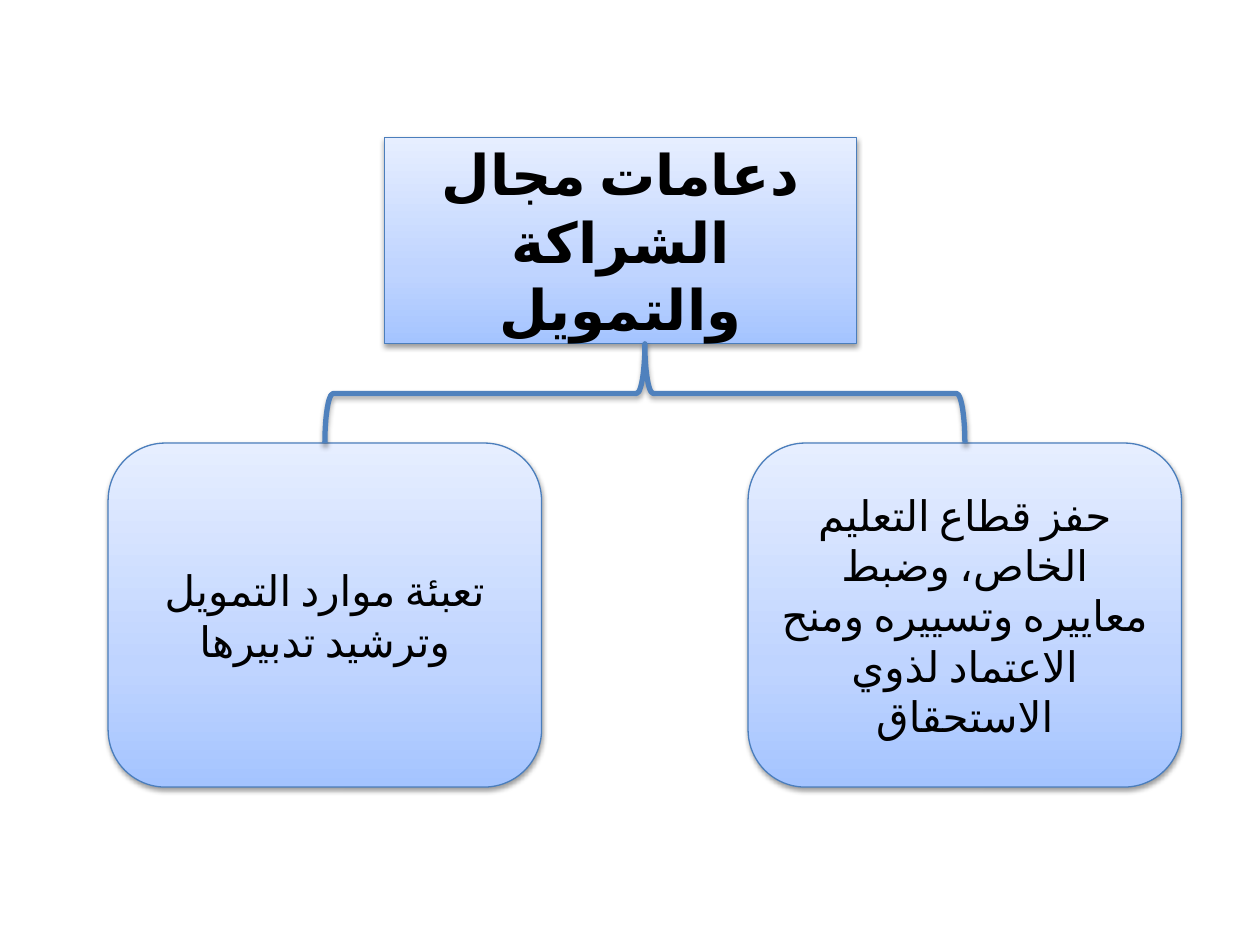
from copy import deepcopy
from dataclasses import dataclass

from lxml.etree import SubElement
from pptx import Presentation
from pptx.dml.color import RGBColor
from pptx.enum.lang import MSO_LANGUAGE_ID
from pptx.enum.shapes import MSO_SHAPE
from pptx.enum.text import MSO_ANCHOR, MSO_AUTO_SIZE, PP_ALIGN
from pptx.oxml.ns import qn
from pptx.util import Pt

HEADING = "دعامات مجال الشراكة والتمويل"
PILLARS = [
    "حفز قطاع التعليم الخاص، وضبط معاييره وتسييره ومنح الاعتماد لذوي الاستحقاق",
    "تعبئة موارد التمويل وترشيد تدبيرها",
]


@dataclass(frozen=True)
class Theme:
    font: str = "Calibri"
    text: str = "000000"
    outline: str = "4B7EBC"
    brace: str = "4F81BD"
    shadow: str = "000000"
    gradient: tuple = ((0, "A4C4FF"), (0.35, "BFD4FF"), (1, "E6EEFF"))
    heading_size: int = 32
    pillar_size: int = 24
    outline_width: float = 0.75
    brace_width: float = 3


THEME = Theme()
HEADING_LEFT, HEADING_TOP, HEADING_WIDTH, HEADING_HEIGHT = 219.6, 78.5, 270, 118
CARD_TOP, CARD_WIDTH, CARD_HEIGHT = 253.2, 247.7, 196.6
FIRST_CARD_LEFT, CARD_STEP = 427.5, -365.7


def add_shadow(shape, opacity, distance):
    shape.shadow.inherit = False
    effects = shape._element.spPr.find(qn("a:effectLst"))
    shadow = SubElement(effects, qn("a:outerShdw"), blurRad=str(Pt(3.1)),
                        dist=str(Pt(distance)), dir="5400000", rotWithShape="0")
    color = SubElement(shadow, qn("a:srgbClr"), val=THEME.shadow)
    SubElement(color, qn("a:alpha"), val=str(opacity * 1000))


def set_outline(shape, color, width):
    shape.line.color.rgb = RGBColor.from_string(color)
    shape.line.width = Pt(width)


def style_box(shape):
    shape.fill.gradient()
    shape.fill.gradient_angle = 90
    stop_list = shape._element.spPr.find(qn("a:gradFill")).find(qn("a:gsLst"))
    stop_list.append(deepcopy(stop_list[-1]))
    for stop, (position, color) in zip(shape.fill.gradient_stops, THEME.gradient):
        stop.position = position
        stop.color.rgb = RGBColor.from_string(color)
    set_outline(shape, THEME.outline, THEME.outline_width)
    add_shadow(shape, 38, 1.6)


def write_text(shape, text, size, bold=False):
    frame = shape.text_frame
    frame.word_wrap = True
    frame.auto_size = MSO_AUTO_SIZE.NONE
    frame.vertical_anchor = MSO_ANCHOR.MIDDLE
    para = frame.paragraphs[0]
    para.alignment = PP_ALIGN.CENTER
    para._p.get_or_add_pPr().set("rtl", "1")
    span = para.add_run()
    span.text = text
    span.font.name = THEME.font
    span.font.size = Pt(size)
    span.font.bold = bold
    span.font.language_id = MSO_LANGUAGE_ID.ARABIC_MOROCCO
    span.font.color.rgb = RGBColor.from_string(THEME.text)
    SubElement(span._r.get_or_add_rPr(), qn("a:cs"), typeface=THEME.font)


def add_heading(page):
    box = page.shapes.title
    box.left, box.top = Pt(HEADING_LEFT), Pt(HEADING_TOP)
    box.width, box.height = Pt(HEADING_WIDTH), Pt(HEADING_HEIGHT)
    style_box(box)
    write_text(box, HEADING, THEME.heading_size, bold=True)


def add_pillar(page, index, text):
    card = page.shapes.add_shape(
        MSO_SHAPE.ROUNDED_RECTANGLE, Pt(FIRST_CARD_LEFT + index * CARD_STEP),
        Pt(CARD_TOP), Pt(CARD_WIDTH), Pt(CARD_HEIGHT))
    style_box(card)
    write_text(card, text, THEME.pillar_size)


def add_brace(page):
    span_length = abs(CARD_STEP)
    depth = CARD_TOP - HEADING_TOP - HEADING_HEIGHT
    center_x = FIRST_CARD_LEFT + (CARD_STEP + CARD_WIDTH) / 2
    center_y = CARD_TOP - depth / 2
    brace = page.shapes.add_shape(
        MSO_SHAPE.LEFT_BRACE, Pt(center_x - depth / 2),
        Pt(center_y - span_length / 2), Pt(depth), Pt(span_length))
    brace.rotation = 90
    brace.fill.background()
    set_outline(brace, THEME.brace, THEME.brace_width)
    add_shadow(brace, 35, 1.8)


def main():
    deck = Presentation()
    deck.slide_width, deck.slide_height = Pt(720), Pt(540)
    page = deck.slides.add_slide(deck.slide_layouts[5])
    add_heading(page)
    for index, text in enumerate(PILLARS):
        add_pillar(page, index, text)
    add_brace(page)
    deck.save("out.pptx")


if __name__ == "__main__":
    main()
